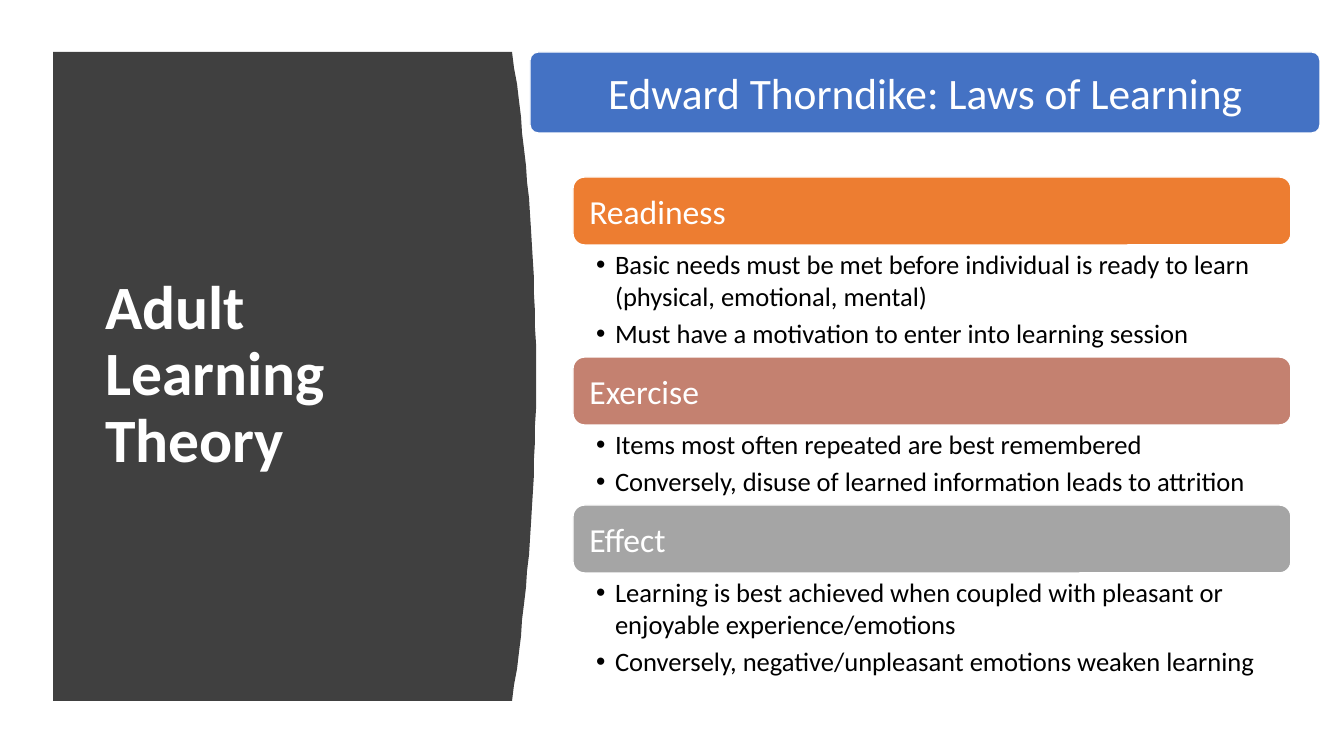
import pptx
import pptx.util
import pptx.dml.color
import pptx.enum.shapes
import pptx.enum.text
import pptx.oxml

RGB = pptx.dml.color.RGBColor
SHAPE = pptx.enum.shapes.MSO_SHAPE
ALIGN = pptx.enum.text.PP_ALIGN
ANCHOR = pptx.enum.text.MSO_ANCHOR
FIT = pptx.enum.text.MSO_AUTO_SIZE

WHITE = RGB(0xFF, 0xFF, 0xFF)
BLACK = RGB(0x00, 0x00, 0x00)
DARK = RGB(0x40, 0x40, 0x40)
BLUE = RGB(0x44, 0x72, 0xC4)
ORANGE = RGB(0xED, 0x7D, 0x31)
ROSE = RGB(0xC4, 0x81, 0x70)
GRAY = RGB(0xA5, 0xA5, 0xA5)

FONT = "Calibri"
SCALE = 914400 / 100.8
LEFT, WIDE, HEAD = 573, 718, 68

LAWS = [
    ("Readiness", ORANGE, 1, 112, [
        "Basic needs must be met before individual is ready to learn (physical, emotional, mental)",
        "Must have a motivation to enter into learning session"]),
    ("Exercise", ROSE, 2, 80, [
        "Items most often repeated are best remembered",
        "Conversely, disuse of learned information leads to attrition"]),
    ("Effect", GRAY, 4, 112, [
        "Learning is best achieved when coupled with pleasant or enjoyable experience/emotions",
        "Conversely, negative/unpleasant emotions weaken learning"]),
]


def px(n):
    return pptx.util.Emu(round(n * SCALE))


def place(shape, x, y, w, h):
    shape.left, shape.top, shape.width, shape.height = px(x), px(y), px(w), px(h)


def style(par, size, color, bold=False):
    font = par.font
    font.name, font.size, font.bold = FONT, pptx.util.Pt(size), bold
    font.color.rgb = color


def inset(frame, x, y, right):
    frame.margin_left, frame.margin_right = px(x), px(right)
    frame.margin_top = frame.margin_bottom = px(y)


def add_panel(slide):
    x, y, edge, foot, bulge = 53, 52, 512, 701, 24
    mid, half = (y + foot) / 2, (foot - y) / 2
    steps = [-1 + i / 20 for i in range(41)]
    curve = [(edge + bulge * (1 - t * t), mid + half * t) for t in steps]
    form = slide.shapes.build_freeform(x, y, scale=SCALE)
    form.add_line_segments(curve + [(x, foot)], close=True)
    panel = form.convert_to_shape()
    panel.shadow.inherit = False
    panel.fill.solid()
    panel.fill.fore_color.rgb = DARK
    panel.line.fill.background()
    tree = panel.element.getparent()
    tree.insert(2, panel.element)


def add_title(slide):
    title = slide.shapes.title
    place(title, 95, 112, 377, 528)
    frame = title.text_frame
    frame.text = "Adult Learning Theory"
    frame.auto_size = FIT.NONE
    frame.vertical_anchor = ANCHOR.MIDDLE
    par = frame.paragraphs[0]
    par.alignment, par.line_spacing = ALIGN.LEFT, 0.9
    style(par, 44, WHITE, True)


def add_bar(slide, box, text, color, size, align, curve):
    bar = slide.shapes.add_shape(SHAPE.ROUNDED_RECTANGLE, *map(px, box))
    bar.adjustments[0] = curve
    bar.shadow.inherit = False
    bar.fill.solid()
    bar.fill.fore_color.rgb = color
    bar.line.color.rgb = WHITE
    bar.line.width = pptx.util.Pt(1)
    frame = bar.text_frame
    frame.word_wrap = True
    frame.vertical_anchor = ANCHOR.MIDDLE
    inset(frame, 13, 6, 13)
    frame.text = text
    par = frame.paragraphs[0]
    par.alignment = align
    style(par, size, WHITE)


def add_list(holder, box, lines):
    place(holder, *box)
    frame = holder.text_frame
    frame.auto_size = FIT.NONE
    frame.vertical_anchor = ANCHOR.TOP
    inset(frame, 23, 3, 19)
    frame.text = "\n".join(lines)
    for par in frame.paragraphs:
        par.alignment, par.line_spacing = ALIGN.LEFT, 1.0
        par.space_before, par.space_after = pptx.util.Pt(0), pptx.util.Pt(3.8)
        style(par, 19, BLACK)
        props = par._p.get_or_add_pPr()
        props.set("marL", str(px(19)))
        props.set("indent", str(px(-19)))
        for tag, key, val in (("buFont", "typeface", "Arial"), ("buChar", "char", "•")):
            node = pptx.oxml.parse_xml(
                f'<a:{tag} xmlns:a="http://schemas.openxmlformats.org/drawingml/2006/main" {key}="{val}"/>')
            props.insert_element_before(node, "a:tabLst", "a:defRPr", "a:extLst")


def main():
    """Build the slide on the laws of learning."""
    deck = pptx.Presentation()
    deck.slide_width, deck.slide_height = px(1344), px(756)
    slide = deck.slides.add_slide(deck.slide_layouts.get_by_name("Comparison"))
    add_panel(slide)
    add_title(slide)
    slots = {p.placeholder_format.idx: p for p in slide.placeholders}
    top = 177
    for name, color, idx, high, lines in LAWS:
        add_bar(slide, (LEFT, top, WIDE, HEAD), name, color, 24, ALIGN.LEFT, 0.17)
        add_list(slots[idx], (LEFT, top + HEAD, WIDE, high), lines)
        top += HEAD + high
    add_bar(slide, (530, 52, 790, 81), "Edward Thorndike: Laws of Learning", BLUE, 31, ALIGN.CENTER, 0.1)
    spare = slots[3].element
    spare.getparent().remove(spare)
    deck.save("out.pptx")


if __name__ == "__main__":
    main()
